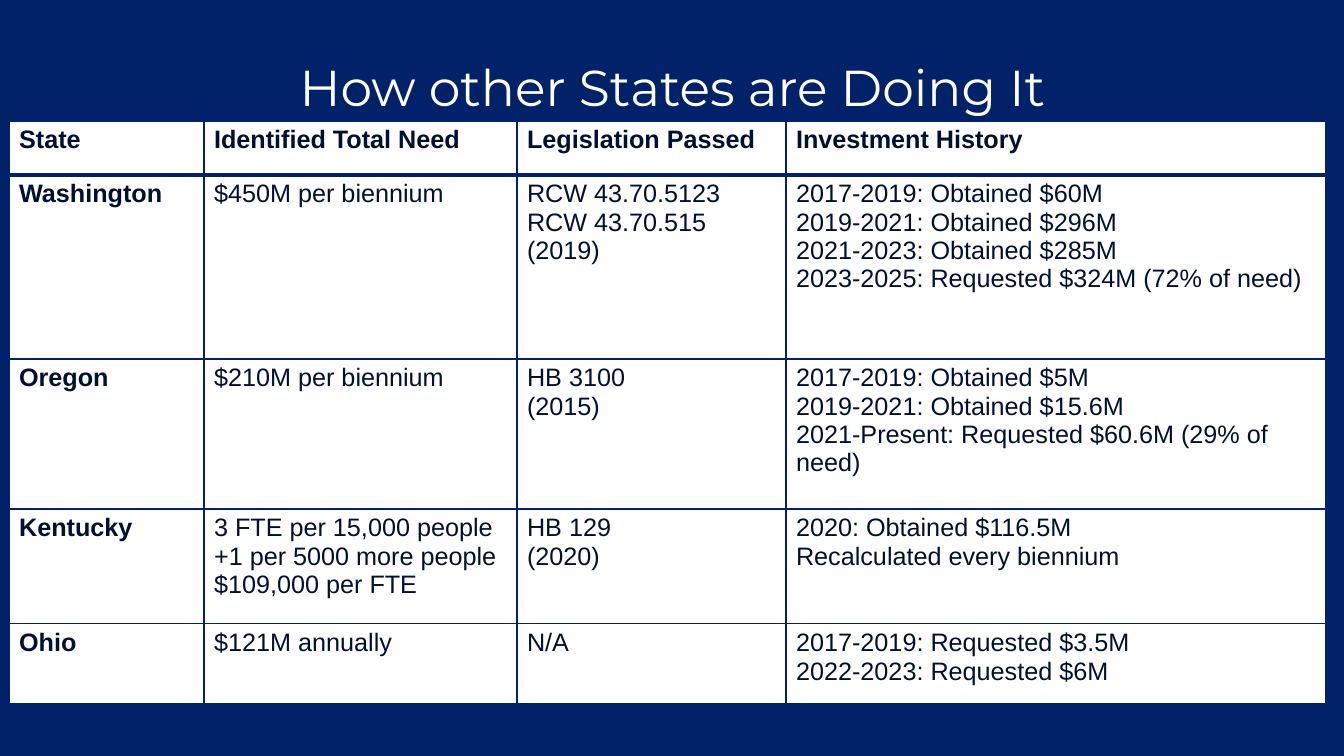
from lxml.etree import SubElement
from pptx import Presentation
from pptx.dml.color import RGBColor
from pptx.enum.text import MSO_ANCHOR, PP_ALIGN
from pptx.oxml.ns import qn
from pptx.util import Pt

# Content
HEADING = "How other States are Doing It"
STATES = [
    ("State", "Identified Total Need", "Legislation Passed", "Investment History"),
    ("Washington", "$450M per biennium",
     "RCW 43.70.5123\nRCW 43.70.515\n(2019)",
     "2017-2019: Obtained $60M\n2019-2021: Obtained $296M\n"
     "2021-2023: Obtained $285M\n2023-2025: Requested $324M (72% of need)"),
    ("Oregon", "$210M per biennium", "HB 3100\n(2015)",
     "2017-2019: Obtained $5M\n2019-2021: Obtained $15.6M\n"
     "2021-Present: Requested $60.6M (29% of need)"),
    ("Kentucky",
     "3 FTE per 15,000 people\n+1 per 5000 more people\n$109,000 per FTE",
     "HB 129\n(2020)",
     "2020: Obtained $116.5M\nRecalculated every biennium"),
    ("Ohio", "$121M annually", "N/A",
     "2017-2019: Requested $3.5M\n2022-2023: Requested $6M"),
]
COLORS = {"navy": "012169", "white": "FFFFFF", "ink": "001035"}

# Geometry in px
SLIDE_W, SLIDE_H = 1344, 756
HEADING_BOX = (93, 41, 1159, 98)
TABLE_LEFT, TABLE_TOP = 9, 121
COLUMN_WIDTHS = [195, 313, 269, 540]
ROW_HEIGHTS = [54, 184, 150, 115, 80]


def px(length):
    return round(length * 914400 / 100.8)


def color(name):
    return RGBColor.from_string(COLORS[name])


def write(frame, text, *, font, size, ink, bold=False, align=None, spacing=None):
    frame.text = text
    for paragraph in frame.paragraphs:
        paragraph.alignment = align
        paragraph.line_spacing = spacing
        for run in paragraph.runs:
            run.font.name = font
            run.font.size = Pt(size)
            run.font.bold = bold
            run.font.color.rgb = color(ink)


def add_borders(cell, top, bottom):
    properties = cell._tc.get_or_add_tcPr()
    widths = {"lnL": 1, "lnR": 1, "lnT": top, "lnB": bottom}
    for position, (side, width) in enumerate(widths.items()):
        line = SubElement(properties, qn(f"a:{side}"), w=str(Pt(width)))
        fill = SubElement(line, qn("a:solidFill"))
        SubElement(fill, qn("a:srgbClr"), val=COLORS["navy"])
        properties.insert(position, line)  # borders come before the cell fill


# Slide
deck = Presentation()
deck.slide_width, deck.slide_height = px(SLIDE_W), px(SLIDE_H)
slide = deck.slides.add_slide(deck.slide_layouts[5])
slide.background.fill.solid()
slide.background.fill.fore_color.rgb = color("navy")

# Heading
heading = slide.shapes.title
heading.left, heading.top, heading.width, heading.height = map(px, HEADING_BOX)
heading.text_frame.vertical_anchor = MSO_ANCHOR.MIDDLE
write(heading.text_frame, HEADING, font="Montserrat", size=36, ink="white",
      align=PP_ALIGN.CENTER, spacing=0.9)

# State comparison
comparison = slide.shapes.add_table(
    len(STATES), len(COLUMN_WIDTHS), px(TABLE_LEFT), px(TABLE_TOP),
    px(sum(COLUMN_WIDTHS)), px(sum(ROW_HEIGHTS))).table
comparison.horz_banding = False
for column, width in zip(comparison.columns, COLUMN_WIDTHS):
    column.width = px(width)
for row, height in zip(comparison.rows, ROW_HEIGHTS):
    row.height = px(height)

for r, state in enumerate(STATES):
    for c, entry in enumerate(state):
        cell = comparison.cell(r, c)
        write(cell.text_frame, entry, font="Arial", size=18, ink="ink",
              bold=r == 0 or c == 0)
        cell.fill.solid()
        cell.fill.fore_color.rgb = color("white")
        add_borders(cell, top=3 if r == 1 else 1, bottom=3 if r == 0 else 1)

deck.save("out.pptx")
